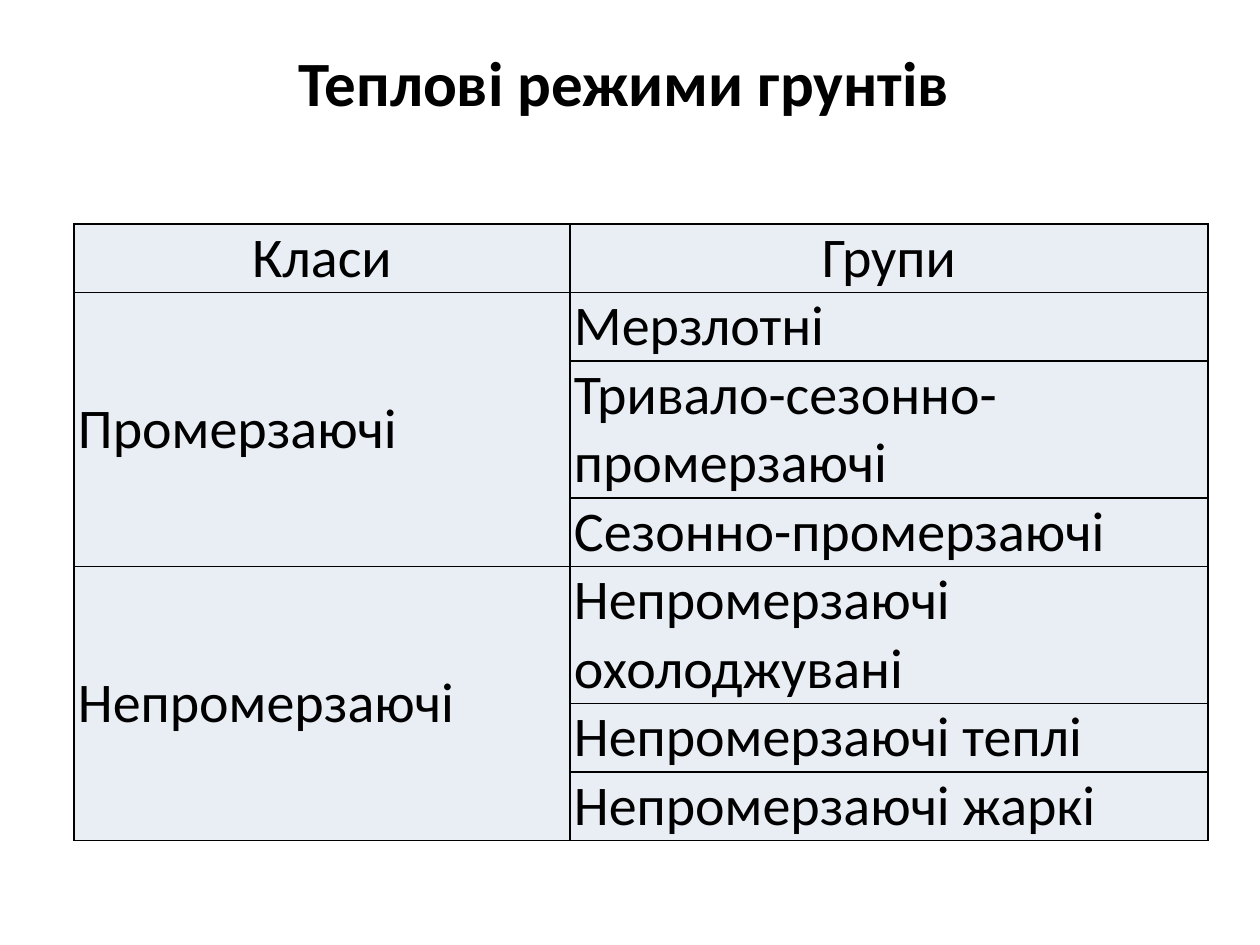
from lxml.etree import SubElement
from pptx import Presentation
from pptx.dml.color import RGBColor
from pptx.enum.text import MSO_ANCHOR, PP_ALIGN
from pptx.oxml.ns import qn
from pptx.util import Pt

FONT = "Calibri"
COLORS = {"text": "000000", "border": "000000", "cell": "E9EDF4"}
HEADERS = ["Класи", "Групи"]
CLASSES = {
    "Промерзаючі": ["Мерзлотні", "Тривало-сезонно-промерзаючі", "Сезонно-промерзаючі"],
    "Непромерзаючі": ["Непромерзаючі охолоджувані", "Непромерзаючі теплі",
                      "Непромерзаючі жаркі"],
}
TWO_LINE_ROWS = {2, 4}
LINE_HEIGHT = 67


def px(n):
    return round(n * 914400 / 126)


def style(p, size, align, bold=False):
    p.alignment = align
    p.font.name, p.font.size, p.font.bold = FONT, Pt(size), bold
    p.font.color.rgb = RGBColor.from_string(COLORS["text"])


def add_title(s, text, x, y, w, h):
    sp = s.shapes.title
    sp.left, sp.top, sp.width, sp.height = px(x), px(y), px(w), px(h)
    tf = sp.text_frame
    tf.text = text
    tf.vertical_anchor = MSO_ANCHOR.MIDDLE
    style(tf.paragraphs[0], 36, PP_ALIGN.CENTER, bold=True)


def format_cell(cell):
    # Borders come before the fill in the cell properties
    tc_pr = cell._tc.get_or_add_tcPr()
    for side in ("a:lnL", "a:lnR", "a:lnT", "a:lnB"):
        ln = SubElement(tc_pr, qn(side), w=str(Pt(1)))
        fill = SubElement(ln, qn("a:solidFill"))
        SubElement(fill, qn("a:srgbClr"), val=COLORS["border"])
    cell.fill.solid()
    cell.fill.fore_color.rgb = RGBColor.from_string(COLORS["cell"])
    cell.margin_left = cell.margin_right = px(4)
    cell.margin_top = cell.margin_bottom = 0
    cell.vertical_anchor = MSO_ANCHOR.MIDDLE


def add_regime_table(s, x, y, widths):
    rows = [HEADERS]
    for name, groups in CLASSES.items():
        rows += [[name if i == 0 else "", group] for i, group in enumerate(groups)]
    heights = [LINE_HEIGHT * (2 if i in TWO_LINE_ROWS else 1) for i in range(len(rows))]
    table = s.shapes.add_table(len(rows), len(widths), px(x), px(y),
                               px(sum(widths)), px(sum(heights))).table
    for column, width in zip(table.columns, widths):
        column.width = px(width)
    for i, (row, height) in enumerate(zip(rows, heights)):
        table.rows[i].height = px(height)
        for j, text in enumerate(row):
            cell = table.cell(i, j)
            format_cell(cell)
            cell.text = text
            style(cell.text_frame.paragraphs[0], 32,
                  PP_ALIGN.LEFT if i else PP_ALIGN.CENTER)

    # Each class spans all of its groups
    top = 1
    for groups in CLASSES.values():
        bottom = top + len(groups) - 1
        table.cell(top, 0).merge(table.cell(bottom, 0))
        top = bottom + 1


def main():
    prs = Presentation()
    prs.slide_width, prs.slide_height = px(1260), px(945)
    s = prs.slides.add_slide(prs.slide_layouts[5])
    add_title(s, "Теплові режими грунтів", 144, 37, 960, 89)
    add_regime_table(s, 74, 224, [496, 638])
    prs.save("out.pptx")


if __name__ == "__main__":
    main()
